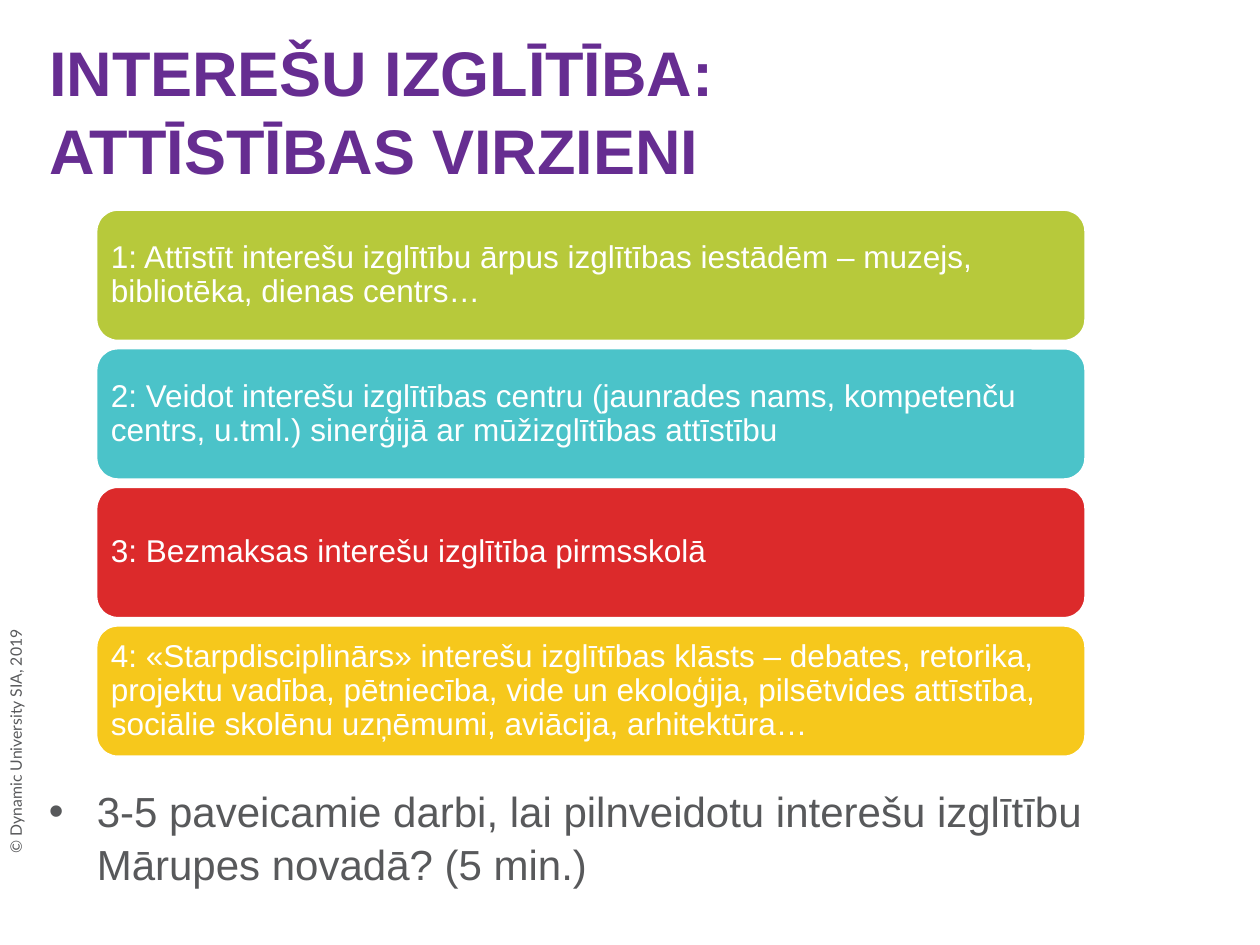
from dataclasses import dataclass

from lxml.etree import SubElement
from pptx import Presentation
from pptx.dml.color import RGBColor
from pptx.enum.shapes import MSO_SHAPE
from pptx.enum.text import MSO_ANCHOR, PP_ALIGN
from pptx.oxml.ns import qn
from pptx.util import Inches, Pt


@dataclass(frozen=True)
class Theme:
    """Colours, fonts and type sizes of the slide."""
    title: str = "662D91"
    text: str = "58595B"
    white: str = "FFFFFF"
    cards: tuple = ("B7C93B", "4BC3C9", "DC2A2B", "F6C81C")
    font: str = "Arial"
    small_font: str = "Lato"
    title_size: int = 36
    body_size: int = 24
    card_size: int = 18
    small_size: int = 9


THEME = Theme()
DIRECTIONS = (
    "1: Attīstīt interešu izglītību ārpus izglītības iestādēm – muzejs, bibliotēka, dienas centrs…",
    "2: Veidot interešu izglītības centru (jaunrades nams, kompetenču centrs, u.tml.) "
    "sinerģijā ar mūžizglītības attīstību",
    "3: Bezmaksas interešu izglītība pirmsskolā",
    "4: «Starpdisciplinārs» interešu izglītības klāsts – debates, retorika, projektu vadība, "
    "pētniecība, vide un ekoloģija, pilsētvides attīstība, sociālie skolēnu uzņēmumi, "
    "aviācija, arhitektūra…",
)


def add_run(p, text, size, color, font=THEME.font, bold=False):
    """Add one formatted run to a paragraph."""
    r = p.add_run()
    r.text = text
    r.font.name = font
    r.font.size = Pt(size)
    r.font.bold = bold
    r.font.color.rgb = RGBColor.from_string(color)


def add_title(s, x, y, w, h):
    """Place the slide title in its placeholder."""
    sp = s.shapes.title
    sp.left, sp.top, sp.width, sp.height = map(Inches, (x, y, w, h))
    tf = sp.text_frame
    tf.vertical_anchor = MSO_ANCHOR.MIDDLE
    p = tf.paragraphs[0]
    p.alignment = PP_ALIGN.LEFT
    p.line_spacing = 1.04
    add_run(p, "INTEREŠU IZGLĪTĪBA: ATTĪSTĪBAS VIRZIENI", THEME.title_size, THEME.title, bold=True)


def add_directions(s, x, y, w, h, gap=0.05):
    """Stack the direction cards evenly in the given box."""
    card_h = (h - gap * (len(DIRECTIONS) - 1)) / len(DIRECTIONS)
    for i, (text, color) in enumerate(zip(DIRECTIONS, THEME.cards)):
        top = y + i * (card_h + gap)
        sp = s.shapes.add_shape(MSO_SHAPE.ROUNDED_RECTANGLE, Inches(x), Inches(top), Inches(w), Inches(card_h))
        sp.shadow.inherit = False
        sp.fill.solid()
        sp.fill.fore_color.rgb = RGBColor.from_string(color)
        sp.line.color.rgb = RGBColor.from_string(THEME.white)
        sp.line.width = Pt(2)
        tf = sp.text_frame
        tf.word_wrap = True
        tf.vertical_anchor = MSO_ANCHOR.MIDDLE
        tf.margin_left = tf.margin_right = tf.margin_top = tf.margin_bottom = Inches(0.07)
        p = tf.paragraphs[0]
        p.alignment = PP_ALIGN.LEFT
        p.line_spacing = 0.9
        add_run(p, text, THEME.card_size, THEME.white)


def add_task(s, x, y, w, h):
    """Place the bulleted task under the cards."""
    tf = s.shapes.add_textbox(Inches(x), Inches(y), Inches(w), Inches(h)).text_frame
    tf.word_wrap = True
    p = tf.paragraphs[0]
    pPr = p._p.get_or_add_pPr()
    pPr.set("marL", str(Inches(0.38)))
    pPr.set("indent", str(Inches(-0.38)))
    SubElement(pPr, qn("a:buFont")).set("typeface", THEME.font)
    SubElement(pPr, qn("a:buChar")).set("char", "•")
    p.line_spacing = 1.04
    add_run(p, "3-5 paveicamie darbi, lai pilnveidotu interešu izglītību Mārupes novadā? (5 min.)",
            THEME.body_size, THEME.text)


def add_copyright(s, x, y, w, h):
    """Place the copyright line, turned to read upwards."""
    sp = s.shapes.add_textbox(Inches(x), Inches(y), Inches(w), Inches(h))
    sp.rotation = 270
    sp.text_frame.word_wrap = True
    add_run(sp.text_frame.paragraphs[0], "© Dynamic University SIA, 2019",
            THEME.small_size, THEME.text, THEME.small_font)


def main():
    """Build and save the slide."""
    prs = Presentation()
    prs.slide_width, prs.slide_height = Inches(10), Inches(7.5)
    s = prs.slides.add_slide(prs.slide_layouts[5])
    add_copyright(s, -1.95, 4.67, 4.15, 0.25)
    add_title(s, 0.29, 0.24, 8.33, 1.25)
    add_directions(s, 0.76, 1.66, 7.86, 4.35)
    add_task(s, 0.29, 6.17, 8.97, 0.85)
    prs.save("out.pptx")


if __name__ == "__main__":
    main()
